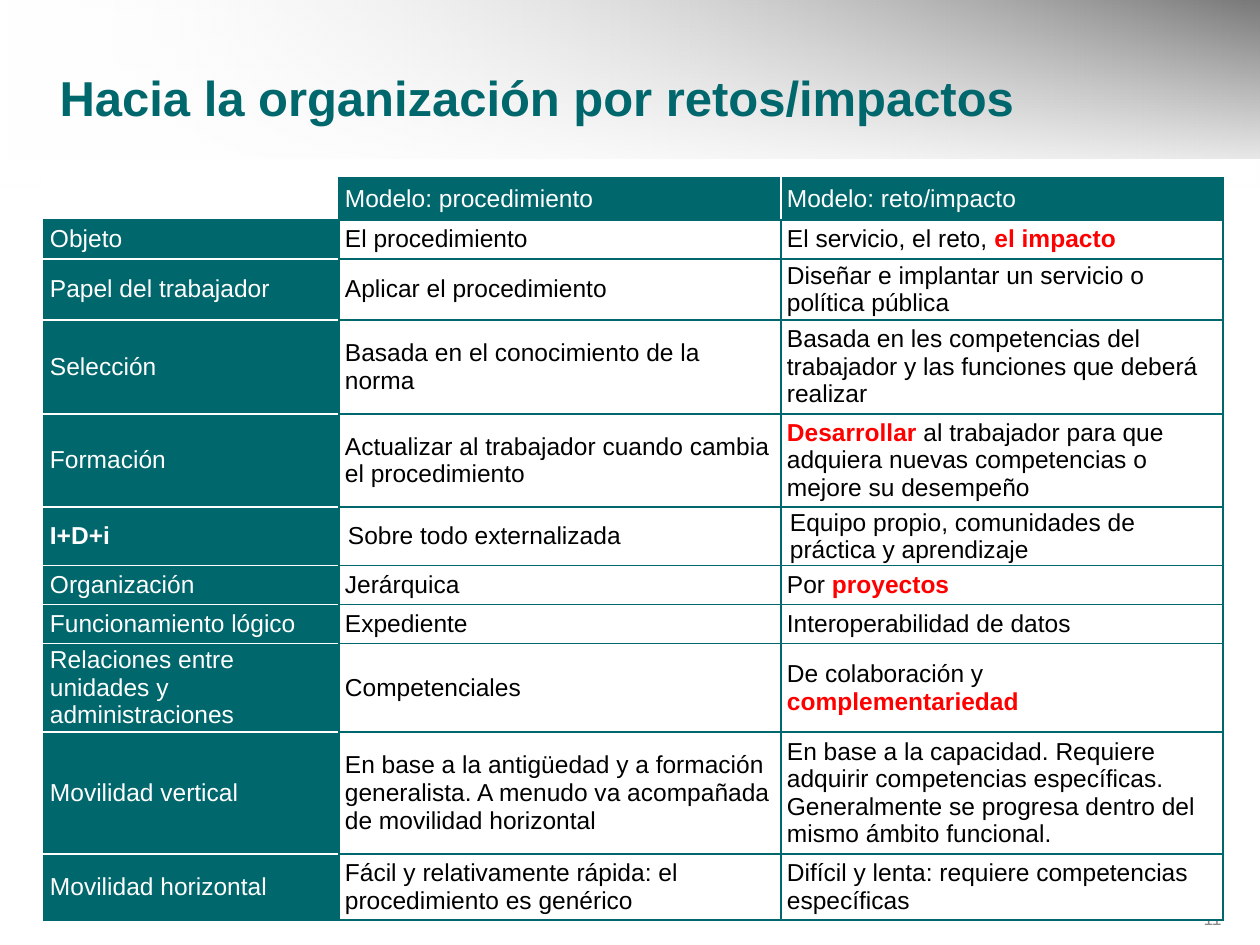
"""Build a slide with a title over a shaded band and a table comparing two models."""
from pptx import Presentation
from pptx.dml.color import RGBColor
from pptx.enum.shapes import MSO_SHAPE
from pptx.enum.text import MSO_ANCHOR, PP_ALIGN
from pptx.oxml import parse_xml
from pptx.oxml.ns import nsdecls
from pptx.util import Emu, Pt

PX_PER_INCH = 126
TEAL, WHITE, BLACK, RED, GRAY = "00676C", "FFFFFF", "000000", "FF0000", "898989"
COLUMNS = [295, 442, 442]
ROWS = [
    (42, "", "Modelo: procedimiento", "Modelo: reto/impacto"),
    (39, "Objeto", "El procedimiento", "El servicio, el reto, *el impacto*"),
    (61, "Papel del trabajador", "Aplicar el procedimiento",
     "Diseñar e implantar un servicio o política pública"),
    (94, "Selección", "Basada en el conocimiento de la norma",
     "Basada en les competencias del trabajador y las funciones que deberá realizar"),
    (93, "Formación", "Actualizar al trabajador cuando cambia el procedimiento",
     "*Desarrollar* al trabajador para que adquiera nuevas competencias o mejore su desempeño"),
    (55, "*I+D+i*", "Sobre todo externalizada",
     "Equipo propio, comunidades de práctica y aprendizaje"),
    (39, "Organización", "Jerárquica", "Por *proyectos*"),
    (39, "Funcionamiento lógico", "Expediente", "Interoperabilidad de datos"),
    (83, "Relaciones entre unidades y administraciones", "Competenciales",
     "De colaboración y *complementariedad*"),
    (122, "Movilidad vertical",
     "En base a la antigüedad y a formación generalista. "
     "A menudo va acompañada de movilidad horizontal",
     "En base a la capacidad. Requiere adquirir competencias específicas. "
     "Generalmente se progresa dentro del mismo ámbito funcional."),
    (66, "Movilidad horizontal", "Fácil y relativamente rápida: el procedimiento es genérico",
     "Difícil y lenta: requiere competencias específicas"),
]
WIDE_INSET_ROW = 5


def px(n):
    """Turn pixels into EMU."""
    return Emu(round(n * 914400 / PX_PER_INCH))


def rgb(value):
    """Turn a hex string into a colour."""
    return RGBColor.from_string(value)


def style(font, size, color, bold=False):
    """Set the typeface, size, colour and weight of a font."""
    font.name, font.size, font.bold = "Arial", Pt(size), bold
    font.color.rgb = rgb(color)


def add_band(s, height, start, end, angle):
    """Add a full-width band fading between two (colour, opacity) stops."""
    sp = s.shapes.add_shape(MSO_SHAPE.RECTANGLE, 0, 0, px(1260), px(height))
    sp.shadow.inherit = False
    sp.line.fill.background()
    stops = "".join(
        f'<a:gs pos="{pos}"><a:srgbClr val="{color}"><a:alpha val="{opacity * 1000}"/>'
        "</a:srgbClr></a:gs>"
        for pos, (color, opacity) in ((0, start), (100000, end)))
    sp._element.spPr.find("{*}prstGeom").addnext(parse_xml(
        f'<a:gradFill {nsdecls("a")} rotWithShape="1"><a:gsLst>{stops}</a:gsLst>'
        f'<a:lin ang="{angle * 60000}" scaled="0"/></a:gradFill>'))
    return sp


def set_title(s, text, below):
    """Place and format the title above the given shape."""
    sp = s.shapes.title
    sp.left, sp.top, sp.width, sp.height = px(47), px(57), px(1159), px(79)
    below._element.addnext(sp._element)
    tf = sp.text_frame
    tf.text = text
    tf.vertical_anchor = MSO_ANCHOR.MIDDLE
    p = tf.paragraphs[0]
    p.alignment = PP_ALIGN.LEFT
    style(p.runs[0].font, 28, TEAL, True)


def add_page_number(s, text):
    """Add the page number at the lower right."""
    tf = s.shapes.add_textbox(px(1155), px(900), px(79), px(37)).text_frame
    tf.word_wrap = True
    tf.vertical_anchor = MSO_ANCHOR.MIDDLE
    tf.text = text
    p = tf.paragraphs[0]
    p.alignment = PP_ALIGN.RIGHT
    style(p.runs[0].font, 10, GRAY)


def border_colors(row, col):
    """Return the left, right, top and bottom border colours of a cell."""
    last = len(ROWS) - 1
    if (row, col) == (0, 0):
        return WHITE, TEAL, WHITE, TEAL
    if row == 0:
        return (TEAL, WHITE, TEAL, TEAL) if col == 1 else (WHITE, TEAL, TEAL, TEAL)
    if col == 0:
        return TEAL, TEAL, WHITE if row > 1 else TEAL, WHITE if row < last else TEAL
    return TEAL, TEAL, TEAL, TEAL


def set_borders(cell, colors):
    """Draw the four one-point borders of a cell."""
    tcPr = cell._tc.get_or_add_tcPr()
    for side, color in zip("LRTB", colors):
        tcPr.append(parse_xml(
            f'<a:ln{side} {nsdecls("a")} w="12700"><a:solidFill>'
            f'<a:srgbClr val="{color}"/></a:solidFill></a:ln{side}>'))


def fill_cell(cell, row, col, text):
    """Format a cell and write its text, with starred parts emphasised."""
    is_head = (row == 0) != (col == 0)
    set_borders(cell, border_colors(row, col))
    cell.fill.solid()
    cell.fill.fore_color.rgb = rgb(TEAL if is_head else WHITE)
    cell.vertical_anchor = MSO_ANCHOR.MIDDLE
    cell.margin_top = cell.margin_bottom = 0
    cell.margin_left = cell.margin_right = px(9 if row == WIDE_INSET_ROW and col else 6)
    p = cell.text_frame.paragraphs[0]
    plain, strong = (WHITE, WHITE) if is_head else (BLACK, RED)
    for i, part in enumerate(text.split("*")):
        if part:
            r = p.add_run()
            r.text = part
            style(r.font, 14, strong if i % 2 else plain, bool(i % 2))


def add_comparison(s):
    """Add the table that compares the two models."""
    heights = [row[0] for row in ROWS]
    table = s.shapes.add_table(len(ROWS), len(COLUMNS), px(44), px(178),
                               px(sum(COLUMNS)), px(sum(heights))).table
    table.first_row = table.horz_banding = False
    for column, width in zip(table.columns, COLUMNS):
        column.width = px(width)
    for i, (height, *texts) in enumerate(ROWS):
        table.rows[i].height = px(height)
        for j, text in enumerate(texts):
            fill_cell(table.cell(i, j), i, j, text)


def main():
    """Build and save the slide."""
    prs = Presentation()
    prs.slide_width, prs.slide_height = px(1260), px(945)
    s = prs.slides.add_slide(prs.slide_layouts[5])
    add_band(s, 159, (WHITE, 0), (BLACK, 100), 0)
    veil = add_band(s, 189, (WHITE, 47), (WHITE, 100), 90)
    set_title(s, "Hacia la organización por retos/impactos", veil)
    add_page_number(s, "11")
    add_comparison(s)
    prs.save("out.pptx")


if __name__ == "__main__":
    main()
